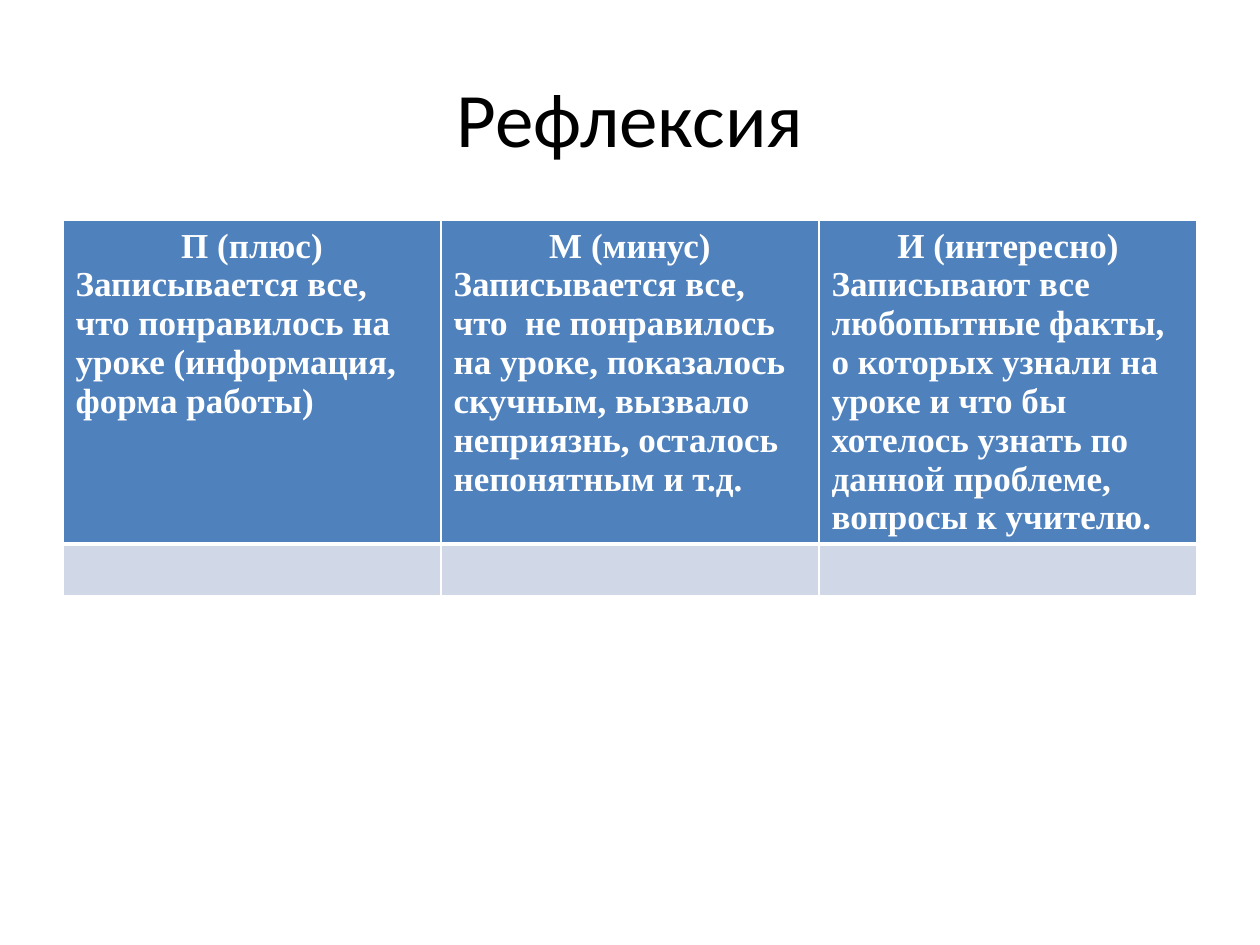
import dataclasses

import lxml.etree
import pptx
import pptx.dml.color
import pptx.enum.text
import pptx.oxml.ns
import pptx.util

Inches = pptx.util.Inches
Pt = pptx.util.Pt
Align = pptx.enum.text.PP_ALIGN

WHITE = "FFFFFF"
HEADER_FILL = "4F81BD"
ANSWER_FILL = "D0D8E8"
THIN, THICK = 1, 3


@dataclasses.dataclass
class Column:
    heading: str
    description: str


COLUMNS = [
    Column("П (плюс)",
           "Записывается все, что понравилось на уроке (информация, форма работы)"),
    Column("М (минус)",
           "Записывается все, что  не понравилось на уроке, показалось скучным, "
           "вызвало неприязнь, осталось непонятным и т.д."),
    Column("И (интересно)",
           "Записывают все любопытные факты, о которых узнали на уроке и что бы "
           "хотелось узнать по данной проблеме, вопросы к учителю."),
]


def set_color(target, color: str) -> None:
    """Colour a fill or a font."""
    if hasattr(target, "solid"):
        target.solid()
        target.fore_color.rgb = pptx.dml.color.RGBColor.from_string(color)
    else:
        target.color.rgb = pptx.dml.color.RGBColor.from_string(color)


def write(para, text: str, *, font: str, size: float, color: str,
          bold: bool = False, align=Align.LEFT) -> None:
    para.alignment = align
    span = para.add_run()
    span.text = text
    span.font.name = font
    span.font.size = Pt(size)
    span.font.bold = bold
    set_color(span.font, color)


def set_borders(cell, *, top: float = THIN, bottom: float = THIN) -> None:
    """Draw white cell borders; call before filling the cell."""
    qn = pptx.oxml.ns.qn
    properties = cell._tc.get_or_add_tcPr()
    for side, width in (("L", THIN), ("R", THIN), ("T", top), ("B", bottom)):
        line = lxml.etree.SubElement(properties, qn(f"a:ln{side}"), w=str(Pt(width)))
        fill = lxml.etree.SubElement(line, qn("a:solidFill"))
        lxml.etree.SubElement(fill, qn("a:srgbClr"), val=WHITE)


def add_title(page, text: str) -> None:
    title = page.shapes.title
    title.left, title.top = Inches(0.5), Inches(0.3)
    title.width, title.height = Inches(9), Inches(1.25)
    title.text_frame.vertical_anchor = pptx.enum.text.MSO_ANCHOR.MIDDLE
    write(title.text_frame.paragraphs[0], text, font="Calibri", size=44,
          color="000000", align=Align.CENTER)


def add_reflection_table(page, columns: list[Column]) -> None:
    table = page.shapes.add_table(2, len(columns), Inches(0.5), Inches(1.75),
                                  Inches(9), Inches(2.97)).table
    table.rows[0].height = Inches(2.56)
    table.rows[1].height = Inches(0.41)
    for index, column in enumerate(columns):
        header, answer = table.cell(0, index), table.cell(1, index)
        set_borders(header, bottom=THICK)
        set_borders(answer, top=THICK)
        set_color(header.fill, HEADER_FILL)
        set_color(answer.fill, ANSWER_FILL)
        style = dict(font="Times New Roman", size=20, color=WHITE, bold=True)
        frame = header.text_frame
        write(frame.paragraphs[0], column.heading, align=Align.CENTER, **style)
        write(frame.add_paragraph(), column.description, **style)


def main() -> None:
    deck = pptx.Presentation()
    deck.slide_width, deck.slide_height = Inches(10), Inches(7.5)
    page = deck.slides.add_slide(deck.slide_layouts.get_by_name("Title Only"))
    add_title(page, "Рефлексия")
    add_reflection_table(page, COLUMNS)
    deck.save("out.pptx")


if __name__ == "__main__":
    main()
